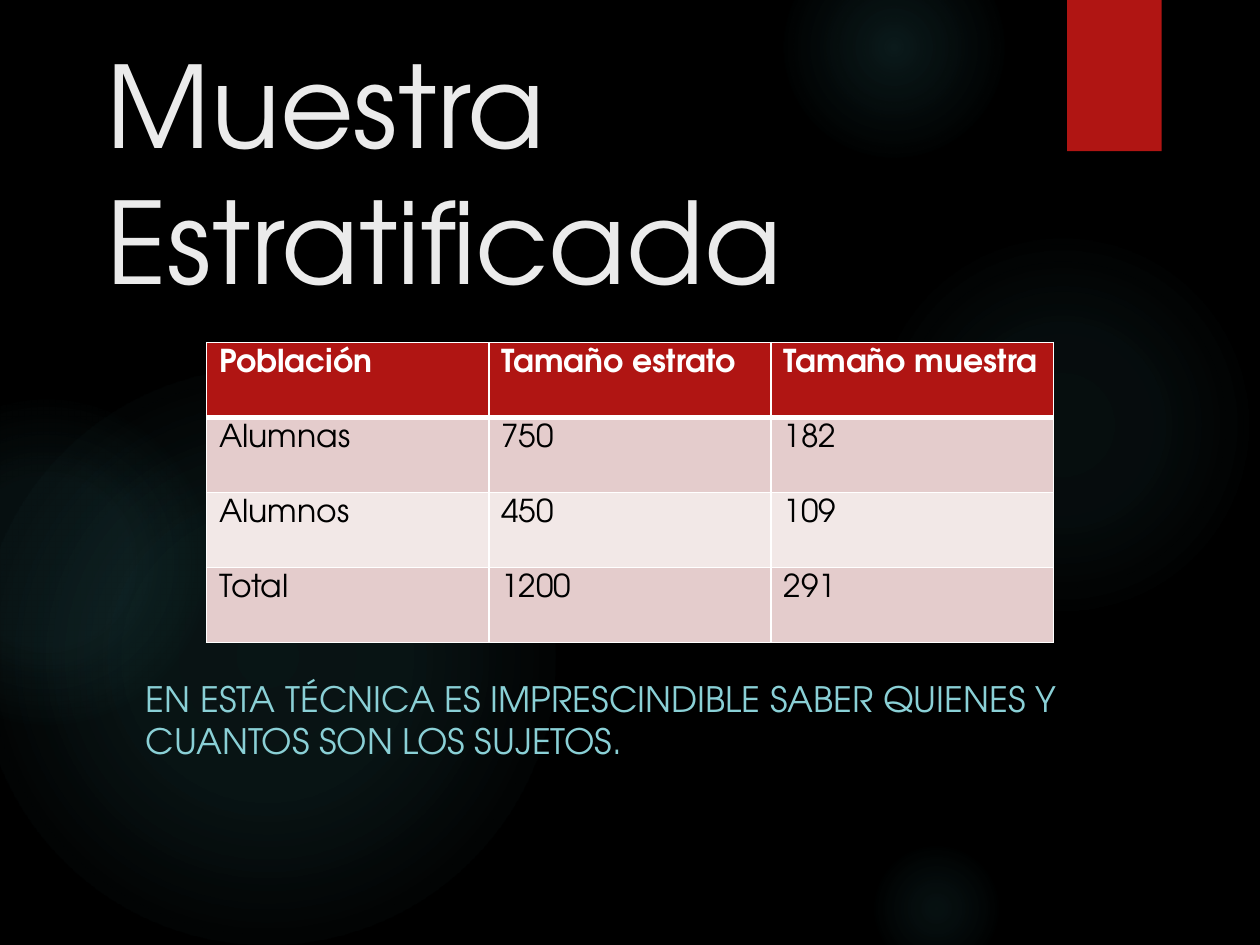
import dataclasses

import lxml.etree
import pptx
import pptx.dml.color
import pptx.enum.shapes
import pptx.enum.text
import pptx.oxml
import pptx.oxml.ns
import pptx.util

Inches = pptx.util.Inches
NS = pptx.oxml.ns.nsdecls("a")


@dataclasses.dataclass(frozen=True)
class Theme:
    """Colours, font and type sizes of the slide."""
    background: str = "000000"
    glow: str = "50B9C1"
    accent: str = "B01513"
    title: str = "EBEBEB"
    subtitle: str = "8AD0D6"
    white: str = "FFFFFF"
    black: str = "000000"
    bands: tuple = ("E4CCCC", "F2E8E7")
    font: str = "TeX Gyre Adventor"
    title_size: float = 64.8
    subtitle_size: float = 20
    table_size: float = 18


THEME = Theme()

GLOWS = (
    ((6.89, 1.83, 3.08, 3.08), ((0, 7), (36, 6), (69, 0))),
    ((6.22, -0.5, 1.75, 1.75), ((0, 14), (36, 7), (73, 0))),
    ((6.89, 6.67, 1.08, 1.08), ((0, 9), (36, 5), (66, 0))),
    ((-0.17, 2.92, 4.58, 4.58), ((0, 11), (36, 10), (75, 0))),
    ((-0.92, 3.17, 2.58, 2.58), ((0, 8), (36, 8), (72, 0))),
)

STRATA = (
    ("Población", "Tamaño estrato", "Tamaño muestra"),
    ("Alumnas", "750", "182"),
    ("Alumnos", "450", "109"),
    ("Total", "1200", "291"),
)


def rgb(code):
    """Return the colour for a hexadecimal code."""
    return pptx.dml.color.RGBColor.from_string(code)


def place(box):
    """Turn a box given in inches into lengths."""
    return [Inches(length) for length in box]


def write(frame, text, size, color, bold=False):
    """Set the text of a frame and format its run."""
    frame.text = text
    font = frame.paragraphs[0].runs[0].font
    font.name, font.size, font.bold = THEME.font, pptx.util.Pt(size), bold
    font.color.rgb = rgb(color)


def add_plain_shape(slide, kind, box):
    """Add a shape without line or shadow."""
    shape = slide.shapes.add_shape(kind, *place(box))
    shape.shadow.inherit = False
    shape.line.fill.background()
    return shape


def add_glow(slide, box, stops):
    """Add a circle that fades out from its centre."""
    glow = add_plain_shape(slide, pptx.enum.shapes.MSO_SHAPE.OVAL, box)
    glow.fill.background()
    stop_xml = "".join(
        f'<a:gs pos="{position * 1000}"><a:srgbClr val="{THEME.glow}">'
        f'<a:alpha val="{alpha * 1000}"/></a:srgbClr></a:gs>'
        for position, alpha in stops)
    gradient = pptx.oxml.parse_xml(
        f'<a:gradFill {NS} rotWithShape="1"><a:gsLst>{stop_xml}</a:gsLst>'
        '<a:path path="circle"><a:fillToRect l="50000" t="50000" r="50000" b="50000"/>'
        '</a:path></a:gradFill>')
    properties = glow._element.spPr
    properties.replace(properties.find(pptx.oxml.ns.qn("a:noFill")), gradient)


def add_ribbon(slide, box):
    """Add the red ribbon with its soft shadow."""
    ribbon = add_plain_shape(slide, pptx.enum.shapes.MSO_SHAPE.RECTANGLE, box)
    ribbon.fill.solid()
    ribbon.fill.fore_color.rgb = rgb(THEME.accent)
    effects = ribbon._element.spPr.find(pptx.oxml.ns.qn("a:effectLst"))
    effects.append(pptx.oxml.parse_xml(
        f'<a:outerShdw {NS} blurRad="{pptx.util.Pt(3)}" dist="{pptx.util.Pt(2)}" '
        f'dir="5400000" rotWithShape="0"><a:srgbClr val="{THEME.black}">'
        '<a:alpha val="45000"/></a:srgbClr></a:outerShdw>'))


def add_text(slide, box, text, size, color, anchor, top_inset=0.05):
    """Add a wrapped text box."""
    frame = slide.shapes.add_textbox(*place(box)).text_frame
    frame.word_wrap = True
    frame.vertical_anchor = anchor
    frame.margin_top = Inches(top_inset)
    write(frame, text, size, color)


def set_borders(cell, widths):
    """Draw the left, right, top and bottom borders of a cell."""
    properties = cell._tc.get_or_add_tcPr()
    for index, (side, width) in enumerate(zip("LRTB", widths)):
        properties.insert(index, pptx.oxml.parse_xml(
            f'<a:ln{side} {NS} w="{pptx.util.Pt(width)}"><a:solidFill>'
            f'<a:srgbClr val="{THEME.white}"/></a:solidFill></a:ln{side}>'))


def add_strata_table(slide, box, rows):
    """Add the table of strata with a red header and banded rows."""
    table = slide.shapes.add_table(len(rows), len(rows[0]), *place(box)).table
    for r, row in enumerate(rows):
        header = r == 0
        fill = THEME.accent if header else THEME.bands[(r - 1) % 2]
        color = THEME.white if header else THEME.black
        for c, text in enumerate(row):
            cell = table.cell(r, c)
            write(cell.text_frame, text, THEME.table_size, color, header)
            cell.fill.solid()
            cell.fill.fore_color.rgb = rgb(fill)
            set_borders(cell, (1, 1, 3 if r == 1 else 1, 3 if header else 1))


def main():
    """Build the slide and save it."""
    deck = pptx.Presentation()
    deck.slide_width, deck.slide_height = Inches(10), Inches(7.5)
    slide = deck.slides.add_slide(deck.slide_layouts[6])
    slide.background.fill.solid()
    slide.background.fill.fore_color.rgb = rgb(THEME.background)
    for box, stops in GLOWS:
        add_glow(slide, box, stops)
    add_ribbon(slide, (8.47, 0, 0.75, 1.2))
    anchors = pptx.enum.text.MSO_ANCHOR
    add_text(slide, (0.75, 1.7, 8.5, 0.79), "Muestra Estratificada",
             THEME.title_size, THEME.title, anchors.BOTTOM)
    add_text(slide, (1.06, 1.07, 7.87, 5.67),
             "EN ESTA TÉCNICA ES IMPRESCINDIBLE SABER QUIENES Y CUANTOS SON LOS SUJETOS.",
             THEME.subtitle_size, THEME.subtitle, anchors.TOP, top_inset=4.31)
    add_strata_table(slide, (1.64, 2.72, 6.72, 2.38), STRATA)
    deck.save("out.pptx")


if __name__ == "__main__":
    main()
